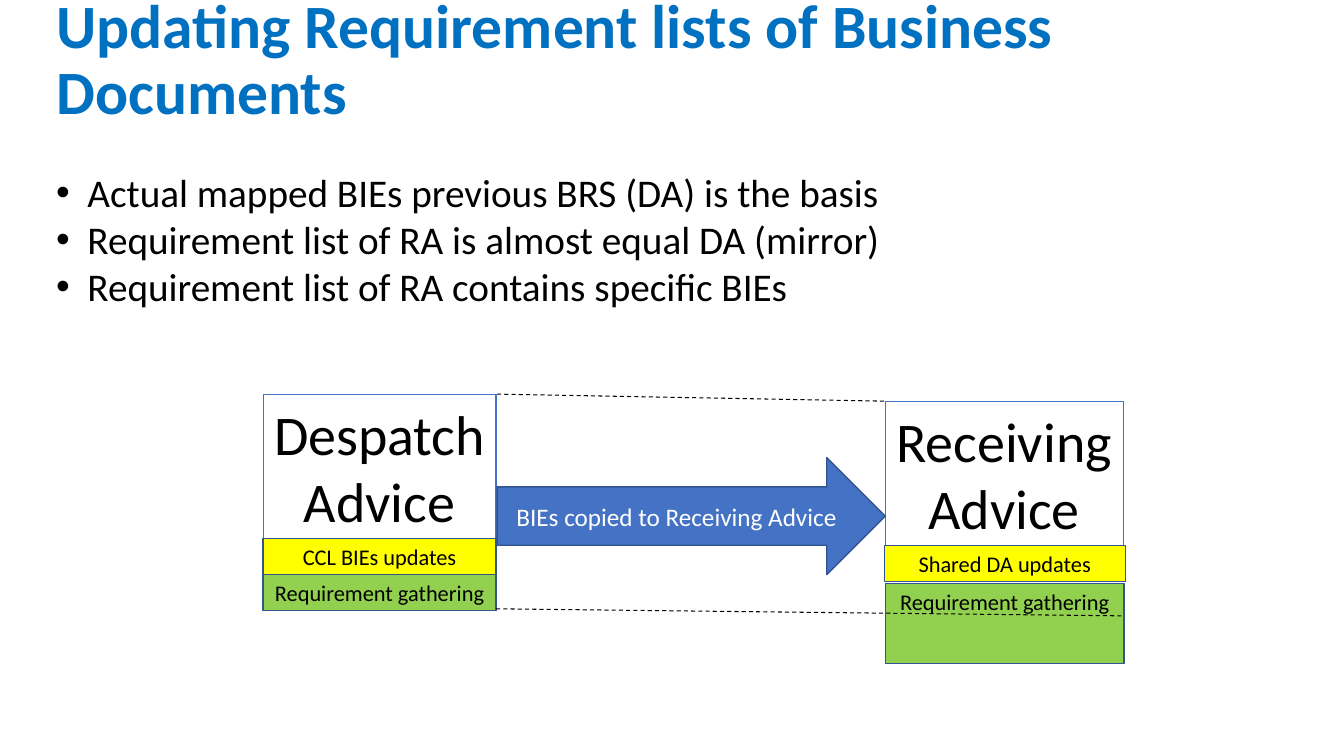
from lxml.etree import SubElement
from pptx import Presentation
from pptx.dml.color import RGBColor
from pptx.enum.dml import MSO_LINE
from pptx.enum.shapes import MSO_CONNECTOR, MSO_SHAPE
from pptx.enum.text import MSO_ANCHOR, MSO_AUTO_SIZE, PP_ALIGN
from pptx.oxml.ns import qn
from pptx.util import Emu, Pt

PX = 9144  # 100 px to the inch
FONT = "Calibri"
BLACK, WHITE = "000000", "FFFFFF"
TITLE_BLUE, BLUE, DARK_BLUE = "0070C0", "4472C4", "325491"
YELLOW, GREEN = "FFFF00", "92D050"


def px(*lengths):
    return [Emu(length * PX) for length in lengths]


def color(hex_string):
    return RGBColor.from_string(hex_string)


def write(frame, lines, size, ink=BLACK, align=PP_ALIGN.CENTER, bold=False):
    frame.text = "\n".join(lines)
    for para in frame.paragraphs:
        para.alignment = align
        para.font.name = FONT
        para.font.size = Pt(size)
        para.font.bold = bold
        para.font.color.rgb = color(ink)


def add_title(page, text):
    title = page.shapes.title
    title.left, title.top, title.width, title.height = px(46, 24, 1274, 74)
    frame = title.text_frame
    write(frame, [text], 44, TITLE_BLUE, PP_ALIGN.LEFT, bold=True)
    frame.auto_size = MSO_AUTO_SIZE.NONE
    frame.vertical_anchor = MSO_ANCHOR.MIDDLE
    frame.paragraphs[0].line_spacing = 0.9


def add_bullets(page, place, lines):
    frame = page.shapes.add_textbox(*px(*place)).text_frame
    frame.word_wrap = True
    write(frame, lines, 28, align=PP_ALIGN.LEFT)
    for para in frame.paragraphs:
        properties = para._p.get_or_add_pPr()
        properties.set("marL", str(31 * PX))
        properties.set("indent", str(-31 * PX))
        SubElement(properties, qn("a:buFont"), typeface="Arial")
        SubElement(properties, qn("a:buChar"), char="•")


def add_block(page, place, lines, size=16, fill=None, line=DARK_BLUE, line_width=1,
              ink=BLACK, kind=MSO_SHAPE.RECTANGLE, anchor=MSO_ANCHOR.MIDDLE, wrap=True):
    block = page.shapes.add_shape(kind, *px(*place))
    block.shadow.inherit = False
    if fill:
        block.fill.solid()
        block.fill.fore_color.rgb = color(fill)
    else:
        block.fill.background()
    block.line.color.rgb = color(line)
    block.line.width = Pt(line_width)
    frame = block.text_frame
    frame.word_wrap = wrap
    frame.vertical_anchor = anchor
    write(frame, lines, size, ink)


def add_document(page, place, lines):
    add_block(page, place, lines, 40, line=BLUE, line_width=0.75,
              anchor=MSO_ANCHOR.TOP, wrap=False)


def add_dashed_line(page, *ends):
    dashed = page.shapes.add_connector(MSO_CONNECTOR.STRAIGHT, *px(*ends))
    dashed.line.color.rgb = color(BLACK)
    dashed.line.width = Pt(0.75)
    dashed.line.dash_style = MSO_LINE.DASH
    SubElement(dashed._element.spPr, qn("a:effectLst"))


def main():
    deck = Presentation()
    deck.slide_width, deck.slide_height = px(1333, 750)
    page = deck.slides.add_slide(deck.slide_layouts[5])

    # Heading and key points
    add_title(page, "Updating Requirement lists of Business Documents")
    add_bullets(page, (46, 162, 1274, 151), [
        "Actual mapped BIEs previous BRS (DA) is the basis",
        "Requirement list of RA is almost equal DA (mirror)",
        "Requirement list of RA contains specific BIEs",
    ])

    # The two documents with their requirement layers
    add_document(page, (261, 391, 231, 145), ["Despatch", "Advice"])
    add_document(page, (878, 398, 236, 145), ["Receiving", "Advice"])
    gathering = ["Requirement gathering"]
    add_block(page, (878, 579, 237, 79), gathering, fill=GREEN, anchor=MSO_ANCHOR.TOP)
    add_block(page, (261, 570, 231, 36), gathering, fill=GREEN)
    add_block(page, (261, 534, 231, 36), ["CCL BIEs updates"], fill=YELLOW)
    add_block(page, (877, 541, 239, 36), ["Shared DA updates"], fill=YELLOW)

    # Copy arrow and the lines that mirror one document onto the other
    add_block(page, (493, 454, 385, 116), ["BIEs copied to Receiving Advice"], 18,
              fill=BLUE, ink=WHITE, kind=MSO_SHAPE.RIGHT_ARROW)
    add_dashed_line(page, 493, 391, 878, 398)
    add_dashed_line(page, 492, 604, 1115, 611)

    deck.save("out.pptx")


if __name__ == "__main__":
    main()
